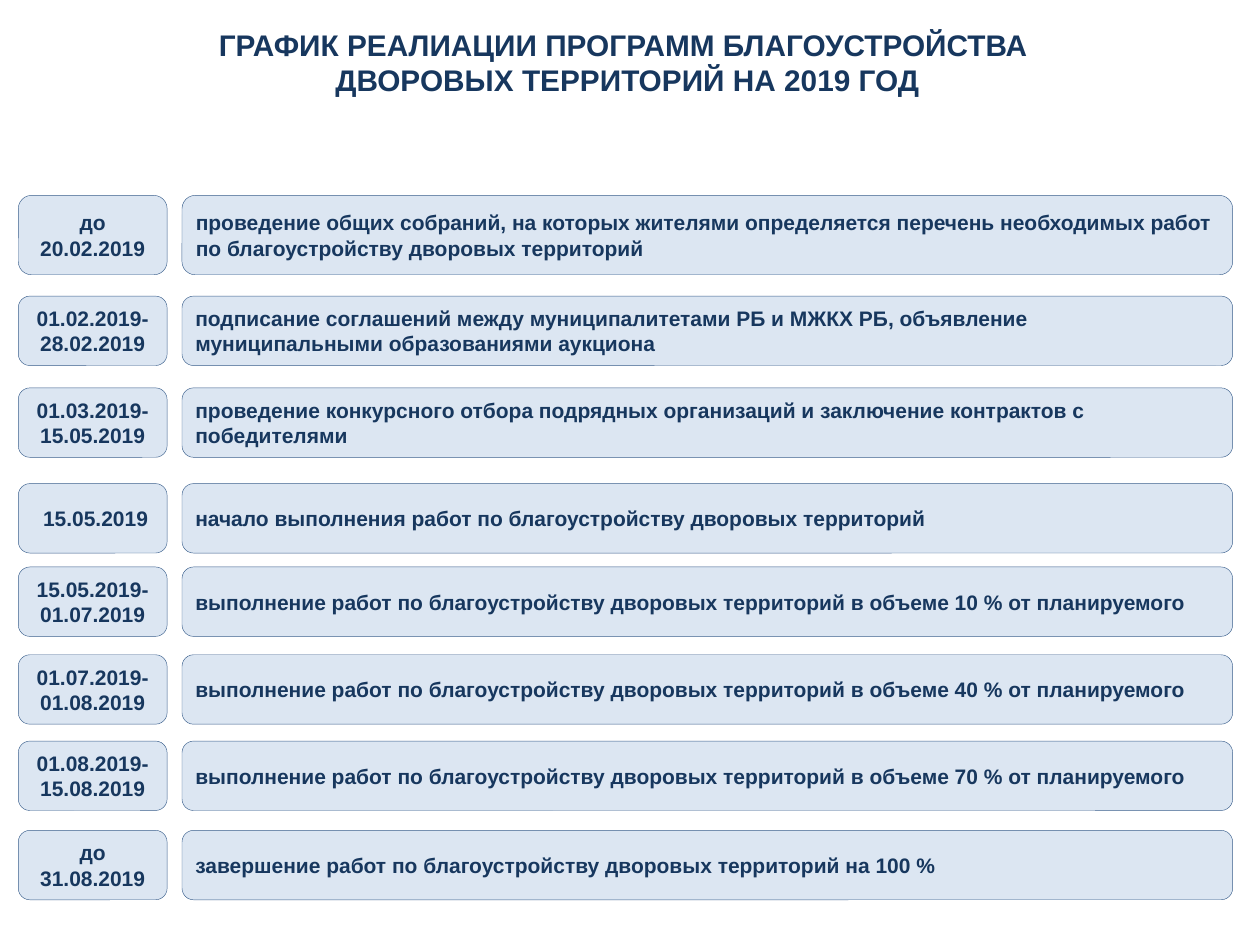
from dataclasses import dataclass

from pptx import Presentation
from pptx.dml.color import RGBColor
from pptx.enum.shapes import MSO_SHAPE
from pptx.enum.text import MSO_ANCHOR, PP_ALIGN
from pptx.util import Cm, Pt

ROUNDED = MSO_SHAPE.ROUNDED_RECTANGLE
MIDDLE = MSO_ANCHOR.MIDDLE
LEFT = PP_ALIGN.LEFT
CENTER = PP_ALIGN.CENTER


@dataclass(frozen=True)
class Theme:
    font: str = "Arial"
    ink: RGBColor = RGBColor(0x17, 0x37, 0x5E)
    panel: RGBColor = RGBColor(0xDC, 0xE6, 0xF2)
    border: RGBColor = RGBColor(0x3A, 0x5F, 0x8C)
    border_width: float = 0.25
    title_size: int = 17
    body_size: int = 12


THEME = Theme()

TITLE = "ГРАФИК РЕАЛИАЦИИ ПРОГРАММ БЛАГОУСТРОЙСТВА \nДВОРОВЫХ ТЕРРИТОРИЙ НА 2019 ГОД"
PARTIAL_WORK = "выполнение работ по благоустройству дворовых территорий в объеме {} % от планируемого"

STAGES = [
    (3.94, 1.6, "до 20.02.2019",
     "проведение общих собраний, на которых жителями определяется перечень "
     "необходимых работ по благоустройству дворовых территорий"),
    (5.97, 1.4, "01.02.2019-28.02.2019",
     "подписание соглашений между муниципалитетами РБ и МЖКХ РБ, "
     "объявление муниципальными образованиями аукциона"),
    (7.82, 1.4, "01.03.2019-15.05.2019",
     "проведение конкурсного отбора подрядных организаций и заключение "
     "контрактов с победителями"),
    (9.75, 1.4, " 15.05.2019",
     "начало выполнения работ по благоустройству дворовых территорий"),
    (11.43, 1.4, "15.05.2019-01.07.2019", PARTIAL_WORK.format(10)),
    (13.2, 1.4, "01.07.2019-01.08.2019", PARTIAL_WORK.format(40)),
    (14.94, 1.4, "01.08.2019-15.08.2019", PARTIAL_WORK.format(70)),
    (16.74, 1.4, "до 31.08.2019",
     "завершение работ по благоустройству дворовых территорий на 100 %"),
]

DATE_LEFT, DATE_WIDTH = 0.37, 3.0
TASK_LEFT, TASK_WIDTH = 3.67, 21.18


def write(frame, text, size, align, inset_x, inset_y):
    frame.word_wrap = True
    frame.margin_left = frame.margin_right = Cm(inset_x)
    frame.margin_top = frame.margin_bottom = Cm(inset_y)
    frame.text = text
    for paragraph in frame.paragraphs:
        paragraph.alignment = align
        for run in paragraph.runs:
            run.font.name = THEME.font
            run.font.size = Pt(size)
            run.font.bold = True
            run.font.color.rgb = THEME.ink


def add_title(slide):
    title = slide.shapes.add_textbox(Cm(-0.05), Cm(0.38), Cm(25.4), Cm(1.75))
    write(title.text_frame, TITLE, THEME.title_size, CENTER, 0.28, 0.15)


def add_panel(slide, left, top, width, height, text, align):
    panel = slide.shapes.add_shape(ROUNDED, Cm(left), Cm(top), Cm(width), Cm(height))
    panel.shadow.inherit = False
    panel.fill.solid()
    panel.fill.fore_color.rgb = THEME.panel
    panel.line.color.rgb = THEME.border
    panel.line.width = Pt(THEME.border_width)
    panel.text_frame.vertical_anchor = MIDDLE
    write(panel.text_frame, text, THEME.body_size, align, 0.2, 0.1)


def main():
    deck = Presentation()
    deck.slide_width, deck.slide_height = Cm(25.4), Cm(19.05)
    slide = deck.slides.add_slide(deck.slide_layouts[6])
    add_title(slide)
    for top, height, date, task in STAGES:
        add_panel(slide, DATE_LEFT, top, DATE_WIDTH, height, date, CENTER)
        add_panel(slide, TASK_LEFT, top, TASK_WIDTH, height, task, LEFT)
    deck.save("out.pptx")


if __name__ == "__main__":
    main()
